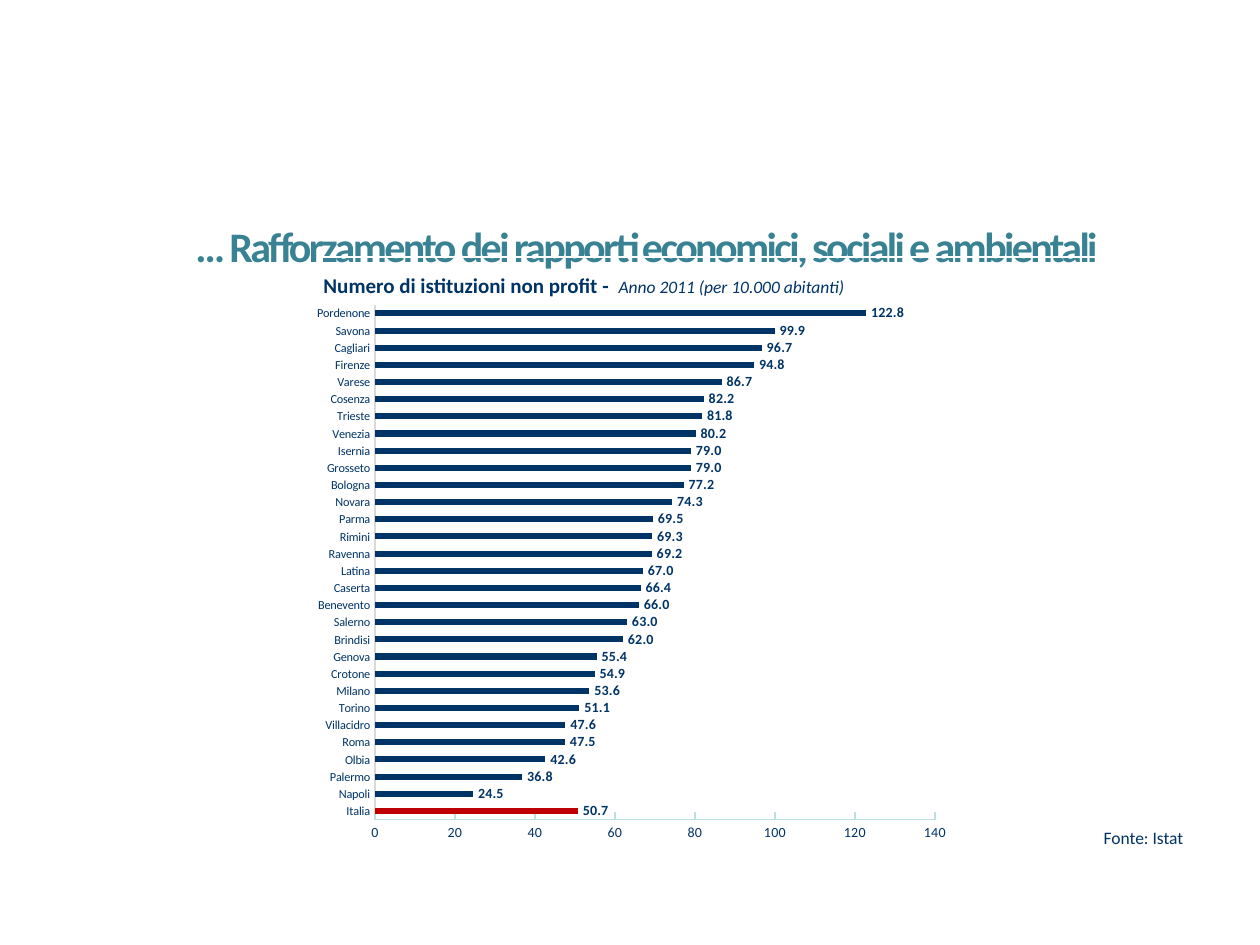
from dataclasses import dataclass

from lxml.etree import SubElement
from pptx import Presentation
from pptx.chart.data import CategoryChartData
from pptx.dml.color import RGBColor
from pptx.enum.chart import XL_CHART_TYPE, XL_LABEL_POSITION, XL_TICK_MARK
from pptx.enum.text import MSO_ANCHOR, PP_ALIGN
from pptx.oxml.ns import qn
from pptx.util import Cm, Pt


@dataclass(frozen=True)
class Theme:
    """Colours, font and type sizes of the slide."""
    face: str = "Calibri"
    teal: str = "388294"
    navy: str = "003366"
    red: str = "C00000"
    grey: str = "D9D9D9"
    pale: str = "BBE0E3"
    title: float = 24
    head: float = 12
    note: float = 10
    mark: float = 8
    town: float = 7


THEME = Theme()
RATES = {
    "Italia": 50.7, "Napoli": 24.5, "Palermo": 36.8, "Olbia": 42.6,
    "Roma": 47.5, "Villacidro": 47.6, "Torino": 51.1, "Milano": 53.6,
    "Crotone": 54.9, "Genova": 55.4, "Brindisi": 62, "Salerno": 63,
    "Benevento": 66, "Caserta": 66.4, "Latina": 67, "Ravenna": 69.2,
    "Rimini": 69.3, "Parma": 69.5, "Novara": 74.3, "Bologna": 77.2,
    "Grosseto": 79, "Isernia": 79, "Venezia": 80.2, "Trieste": 81.8,
    "Cosenza": 82.2, "Varese": 86.7, "Firenze": 94.8, "Cagliari": 96.7,
    "Savona": 99.9, "Pordenone": 122.8,
}


def style(font, size, color=THEME.navy, bold=False, italic=False):
    """Set face, size, colour and weight of a font."""
    font.name, font.size = THEME.face, Pt(size)
    font.bold, font.italic = bold, italic
    font.color.rgb = RGBColor.from_string(color)


def write(para, text, space=None, **form):
    """Add a formatted run of text to a paragraph."""
    run = para.add_run()
    run.text = text
    style(run.font, **form)
    if space is not None:
        run.font._element.set("spc", str(int(space * 100)))


def add_title(slide, text):
    """Place and fill the title."""
    shape = slide.shapes.title
    shape.left, shape.top = Cm(1.5), Cm(4.32)
    shape.width, shape.height = Cm(23.19), Cm(1.27)
    frame = shape.text_frame
    frame.word_wrap, frame.vertical_anchor = True, MSO_ANCHOR.TOP
    para = frame.paragraphs[0]
    para.alignment = PP_ALIGN.CENTER
    write(para, text, space=-1.5, size=THEME.title, color=THEME.teal, bold=True)


def add_head(slide, name, scope):
    """Add the one-cell table that heads the chart."""
    table = slide.shapes.add_table(
        1, 1, Cm(6.5), Cm(5.18), Cm(16.2), Cm(0.86)).table
    table.first_row = table.horz_banding = False
    cell = table.cell(0, 0)
    cell.fill.background()
    cell.vertical_anchor = MSO_ANCHOR.BOTTOM
    cell.margin_left = cell.margin_right = cell.margin_top = Cm(0.02)
    cell.margin_bottom = 0
    para = cell.text_frame.paragraphs[0]
    write(para, name, size=THEME.head, bold=True)
    write(para, scope, size=THEME.note, italic=True)


def add_source(slide, text):
    """Add the source note."""
    box = slide.shapes.add_textbox(Cm(22), Cm(16.54), Cm(3.1), Cm(0.69))
    box.text_frame.word_wrap = True
    write(box.text_frame.paragraphs[0], text, size=THEME.note)


def set_axis(axis, size, color, tick):
    """Format one axis of the chart."""
    axis.has_major_gridlines = False
    axis.major_tick_mark, axis.minor_tick_mark = tick, XL_TICK_MARK.NONE
    axis.format.line.color.rgb = RGBColor.from_string(color)
    axis.format.line.width = Pt(0.75)
    style(axis.tick_labels.font, size)


def set_plot(chart, **parts):
    """Fix the inner plot area as fractions of the chart."""
    area = chart._chartSpace.find(".//" + qn("c:plotArea"))
    for old in area.findall(qn("c:layout")):
        area.remove(old)
    frame = SubElement(area, qn("c:layout"))
    area.insert(0, frame)
    inner = SubElement(frame, qn("c:manualLayout"))
    rules = {"layoutTarget": "inner", "xMode": "edge", "yMode": "edge", **parts}
    for name, value in rules.items():
        SubElement(inner, qn("c:" + name)).set("val", str(value))


def add_bars(slide, rates):
    """Add the bar chart of rates by town."""
    data = CategoryChartData()
    data.categories = list(rates)
    data.add_series("Series 1", list(rates.values()))
    chart = slide.shapes.add_chart(
        XL_CHART_TYPE.BAR_CLUSTERED,
        Cm(6.1), Cm(5.92), Cm(13.28), Cm(11.28), data).chart
    chart.has_legend = chart.has_title = False
    style(chart.font, THEME.note)
    set_axis(chart.category_axis, THEME.town, THEME.grey, XL_TICK_MARK.NONE)
    scale = chart.value_axis
    set_axis(scale, THEME.mark, THEME.pale, XL_TICK_MARK.INSIDE)
    scale.minimum_scale, scale.maximum_scale, scale.major_unit = 0, 140, 20
    scale.tick_labels.number_format = "#,##0"
    scale.tick_labels.number_format_is_linked = False

    plot = chart.plots[0]
    plot.gap_width, plot.vary_by_categories = 182, False
    bars = plot.series[0]
    bars.invert_if_negative = False
    for part, color in ((bars, THEME.navy), (bars.points[0], THEME.red)):
        part.format.fill.solid()
        part.format.fill.fore_color.rgb = RGBColor.from_string(color)
    labels = bars.data_labels
    labels.show_value = True
    labels.number_format, labels.number_format_is_linked = "#,##0.0", False
    labels.position = XL_LABEL_POSITION.OUTSIDE_END
    style(labels.font, THEME.mark, bold=True)
    set_plot(chart, x=0.11, y=0.02, w=0.85, h=0.92)


def main():
    """Build and save the slide."""
    deck = Presentation()
    deck.slide_width, deck.slide_height = Cm(25.4), Cm(19.05)
    slide = deck.slides.add_slide(deck.slide_layouts[5])
    add_title(slide, "… Rafforzamento dei rapporti economici, sociali e ambientali ")
    add_head(slide, "Numero di istituzioni non profit -  ",
             "Anno 2011 (per 10.000 abitanti)")
    add_source(slide, "Fonte: Istat")
    add_bars(slide, RATES)
    deck.save("out.pptx")


if __name__ == "__main__":
    main()
